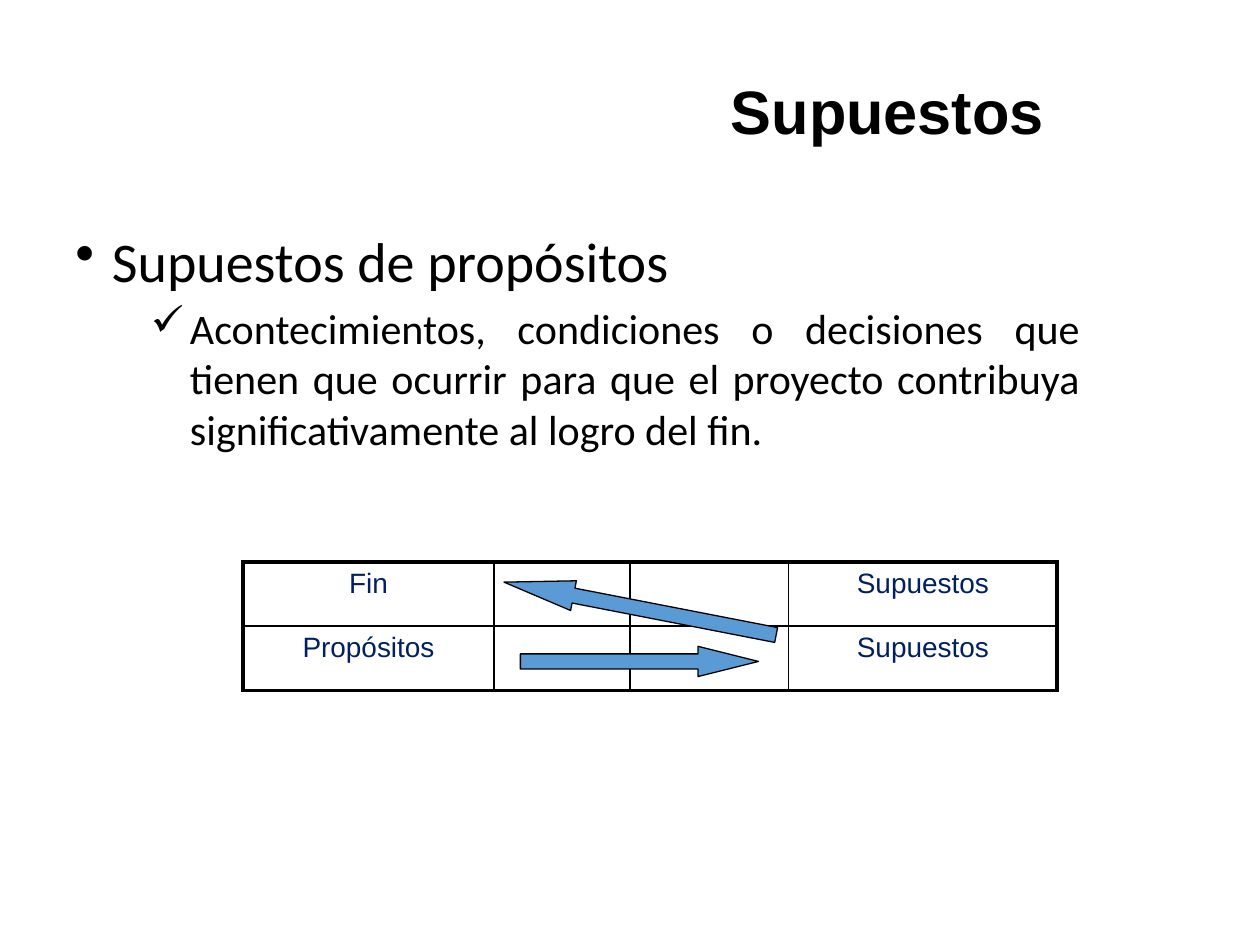
from lxml import etree
from pptx import Presentation
from pptx import util as u
from pptx.dml.color import RGBColor
from pptx.enum import shapes, text
from pptx.oxml.ns import qn

COLORS = {"ink": "000000", "navy": "002060", "arrow": "5B9BD5", "paper": "FFFFFF"}
COLUMNS, ROWS = 100, 75
THIN, THICK = 1, 2.25


def write(paragraph, words, font="Arial", size=16, color="ink", bold=False,
          align=text.PP_ALIGN.CENTER, before=0, spacing=None):
    paragraph.alignment = align
    paragraph.space_before = u.Pt(before)
    if spacing:
        paragraph.line_spacing = spacing
    run = paragraph.add_run()
    run.text = words
    run.font.name, run.font.size, run.font.bold = font, u.Pt(size), bold
    run.font.color.rgb = RGBColor.from_string(COLORS[color])


def add_bullet(paragraph, mark, margin, hanging):
    properties = paragraph._p.get_or_add_pPr()
    properties.set("marL", str(u.Inches(margin)))
    properties.set("indent", str(-u.Inches(hanging)))
    etree.SubElement(properties, qn("a:buChar"), char=mark)


def set_borders(cell, widths):
    """Draw cell borders; widths are points for left, right, top, bottom."""
    properties = cell._tc.get_or_add_tcPr()
    for index, (side, width) in enumerate(zip("LRTB", widths)):
        line = etree.Element(qn(f"a:ln{side}"), w=str(u.Pt(width)))
        fill = etree.SubElement(line, qn("a:solidFill"))
        etree.SubElement(fill, qn("a:srgbClr"), val=COLORS["ink"])
        properties.insert(index, line)


class SlideBuilder:
    """Places elements on a grid of 100 columns by 75 rows."""

    def __init__(self, presentation):
        self.column = presentation.slide_width / COLUMNS
        self.row = presentation.slide_height / ROWS
        self.slide = presentation.slides.add_slide(presentation.slide_layouts[5])
        background = self.slide.background.fill
        background.solid()
        background.fore_color.rgb = RGBColor.from_string(COLORS["paper"])

    def box(self, left, top, width, height):
        return (round(left * self.column), round(top * self.row),
                round(width * self.column), round(height * self.row))

    def title(self, words, *area):
        shape = self.slide.shapes.title
        shape.left, shape.top, shape.width, shape.height = self.box(*area)
        frame = shape.text_frame
        frame.auto_size = text.MSO_AUTO_SIZE.NONE
        frame.vertical_anchor = text.MSO_ANCHOR.TOP
        write(frame.paragraphs[0], words, size=35, bold=True, before=7.5, spacing=0.9)

    def bullets(self, items, *area):
        frame = self.slide.shapes.add_textbox(*self.box(*area)).text_frame
        frame.word_wrap = True
        for level, (words, size, mark, margin, hanging) in enumerate(items):
            paragraph = frame.add_paragraph() if level else frame.paragraphs[0]
            paragraph.level = level
            write(paragraph, words, font="Calibri", size=size,
                  align=text.PP_ALIGN.JUSTIFY, before=size * 0.2)
            add_bullet(paragraph, mark, margin, hanging)

    def table(self, content, widths, left, top, row_height):
        last_row, last_column = len(content) - 1, len(widths) - 1
        area = self.box(left, top, sum(widths), row_height * len(content))
        table = self.slide.shapes.add_table(len(content), len(widths), *area).table
        table.first_row = table.horz_banding = False
        for column, width in zip(table.columns, widths):
            column.width = round(width * self.column)
        for r, line in enumerate(content):
            for c, words in enumerate(line):
                cell = table.cell(r, c)
                cell.fill.background()
                edges = (c == 0, c == last_column, r == 0, r == last_row)
                set_borders(cell, [THICK if edge else THIN for edge in edges])
                if words:
                    write(cell.text_frame.paragraphs[0], words, color="navy", before=3.2)

    def arrow(self, kind, head_length, *area, rotation=0):
        shape = self.slide.shapes.add_shape(kind, *self.box(*area))
        shape.shadow.inherit = False
        shape.adjustments[0], shape.adjustments[1] = 0.5, head_length
        shape.rotation = rotation
        shape.fill.solid()
        shape.fill.fore_color.rgb = RGBColor.from_string(COLORS["arrow"])
        shape.line.color.rgb = RGBColor.from_string(COLORS["ink"])
        shape.line.width = u.Pt(0.75)


def main():
    presentation = Presentation()
    presentation.slide_width, presentation.slide_height = u.Inches(10), u.Inches(7.5)
    builder = SlideBuilder(presentation)
    builder.title("Supuestos", 40.9, 6, 59.1, 3.9)
    builder.bullets([
        ("Supuestos de propósitos", 32, "•", 0.29, 0.29),
        ("Acontecimientos, condiciones o decisiones que tienen que ocurrir para que "
         "el proyecto contribuya significativamente al logro del fin.",
         24, "✓", 0.91, 0.31),
    ], 5, 17.5, 81.7, 9.8)
    builder.table([("Fin", "", "", "Supuestos"), ("Propósitos", "", "", "Supuestos")],
                  (19.9, 10.8, 12.6, 21.3), 19.3, 44.6, 5.1)
    builder.arrow(shapes.MSO_SHAPE.RIGHT_ARROW, 2, 41.3, 51.3, 18.9, 2.4)
    builder.arrow(shapes.MSO_SHAPE.LEFT_ARROW, 2.34, 39.8, 47.1, 22, 2.4, rotation=11)
    presentation.save("out.pptx")


if __name__ == "__main__":
    main()
